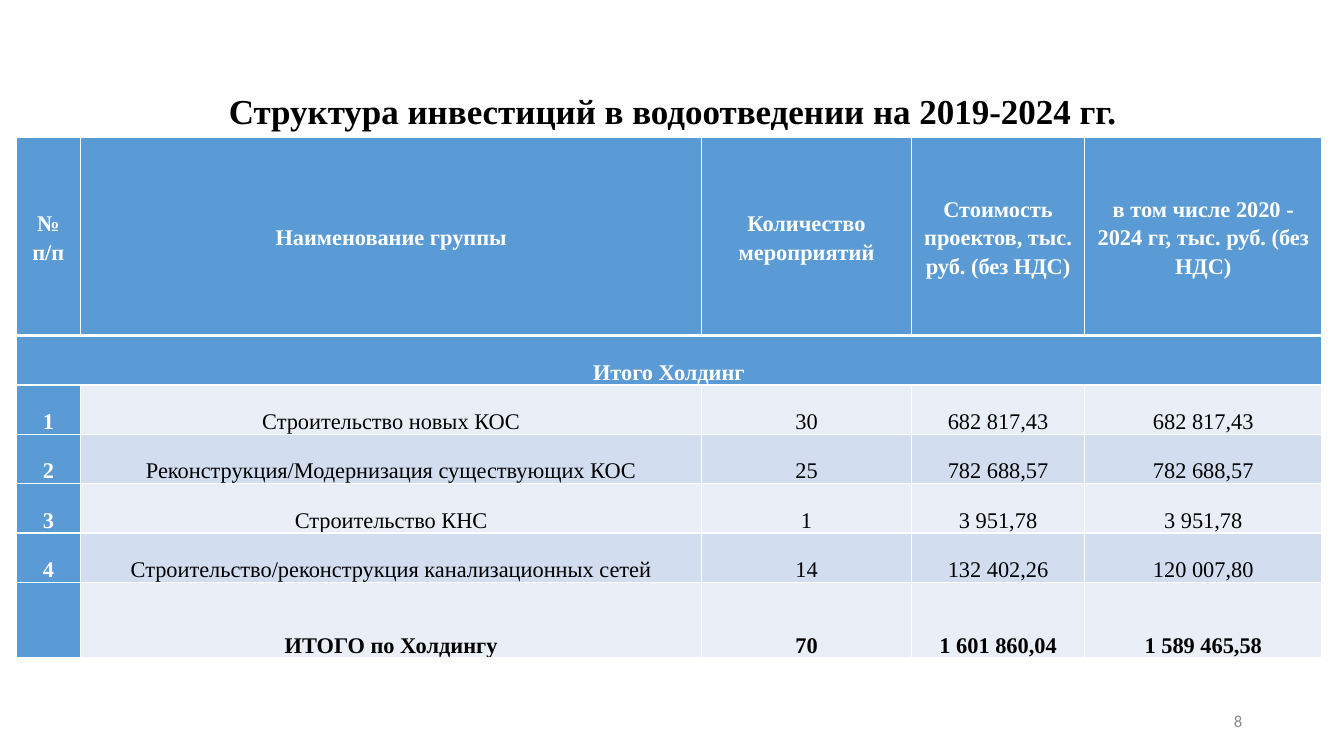
from lxml import etree
from pptx import Presentation
from pptx.dml.color import RGBColor
from pptx.enum import text
from pptx.oxml.ns import qn
from pptx.util import Inches, Pt

TITLE = "Структура инвестиций в водоотведении на 2019-2024 гг."
PAGE_NUMBER = "8"
HEADER = ["№ п/п", "Наименование группы", "Количество мероприятий",
          "Стоимость проектов, тыс. руб. (без НДС)",
          "в том числе 2020 - 2024 гг, тыс. руб. (без НДС)"]
SECTION = ["Итого Холдинг", "", "", "", ""]
GROUPS = [
    ["1", "Строительство новых КОС", "30", "682 817,43", "682 817,43"],
    ["2", "Реконструкция/Модернизация существующих КОС", "25", "782 688,57", "782 688,57"],
    ["3", "Строительство КНС", "1", "3 951,78", "3 951,78"],
    ["4", "Строительство/реконструкция канализационных сетей", "14", "132 402,26", "120 007,80"],
]
TOTAL = ["", "ИТОГО по Холдингу", "70", "1 601 860,04", "1 589 465,58"]
ROWS = [HEADER, SECTION, *GROUPS, TOTAL]

COLUMN_WIDTHS = [0.64, 6.16, 2.08, 1.72, 2.35]
ROW_HEIGHTS = [1.97] + [0.49] * 5 + [0.75]
COLORS = {"accent": "5B9BD5", "light": "EAEFF7", "band": "D2DEEF",
          "white": "FFFFFF", "black": "000000", "gray": "8C8C8C"}
SERIF = "Times New Roman"


def color(name):
    return RGBColor.from_string(COLORS[name])


def write(frame, words, font, size, ink, align, bold=False, spacing=None):
    para = frame.paragraphs[0]
    para.alignment = align
    if spacing:
        para.line_spacing = spacing
    span = para.add_run()
    span.text = words
    span.font.name = font
    span.font.size = Pt(size)
    span.font.bold = bold
    span.font.color.rgb = color(ink)


def add_borders(cell, widths):
    """Draw white borders; widths in points are left, right, top, bottom."""
    properties = cell._tc.get_or_add_tcPr()
    for side, width in zip("LRTB", widths):
        line = etree.SubElement(properties, qn(f"a:ln{side}"), w=str(Pt(width)))
        fill = etree.SubElement(line, qn("a:solidFill"))
        etree.SubElement(fill, qn("a:srgbClr"), val=COLORS["white"])


def format_cell(cell, words, row, column):
    accent = row < 2 or column == 0
    add_borders(cell, (1, 1, 3 if row == 1 else 1, 3 if row == 0 else 1))
    cell.fill.solid()
    cell.fill.fore_color.rgb = color("accent" if accent else "band" if row % 2 else "light")
    cell.margin_left = cell.margin_right = Inches(0.07)
    cell.margin_top = cell.margin_bottom = 0
    cell.vertical_anchor = text.MSO_ANCHOR.MIDDLE if row == 0 else text.MSO_ANCHOR.BOTTOM
    if words:
        write(cell.text_frame, words, SERIF, 16, "white" if accent else "black",
              text.PP_ALIGN.CENTER, accent or row == len(ROWS) - 1, 1.15)


def add_investment_table(page):
    table = page.shapes.add_table(
        len(ROWS), len(HEADER), Inches(0.16), Inches(1.36),
        Inches(sum(COLUMN_WIDTHS)), Inches(sum(ROW_HEIGHTS))).table
    for column, width in zip(table.columns, COLUMN_WIDTHS):
        column.width = Inches(width)
    for row, height in zip(table.rows, ROW_HEIGHTS):
        row.height = Inches(height)
    for r, values in enumerate(ROWS):
        for c, words in enumerate(values):
            format_cell(table.cell(r, c), words, r, c)
    table.cell(1, 0).merge(table.cell(1, len(HEADER) - 1))


def main():
    deck = Presentation()
    deck.slide_width, deck.slide_height = Inches(13.33), Inches(7.5)
    page = deck.slides.add_slide(deck.slide_layouts[5])

    title = page.shapes.title
    title.left, title.top = Inches(0.92), Inches(0.88)
    title.width, title.height = Inches(11.5), Inches(0.48)
    title.text_frame.vertical_anchor = text.MSO_ANCHOR.MIDDLE
    title.text_frame.auto_size = text.MSO_AUTO_SIZE.NONE
    write(title.text_frame, TITLE, SERIF, 25, "black", text.PP_ALIGN.CENTER, True, 0.9)

    add_investment_table(page)

    box = page.shapes.add_textbox(Inches(9.42), Inches(6.95), Inches(3), Inches(0.4))
    box.text_frame.word_wrap = True
    box.text_frame.vertical_anchor = text.MSO_ANCHOR.MIDDLE
    write(box.text_frame, PAGE_NUMBER, "Calibri", 12, "gray", text.PP_ALIGN.RIGHT)

    deck.save("out.pptx")


if __name__ == "__main__":
    main()
